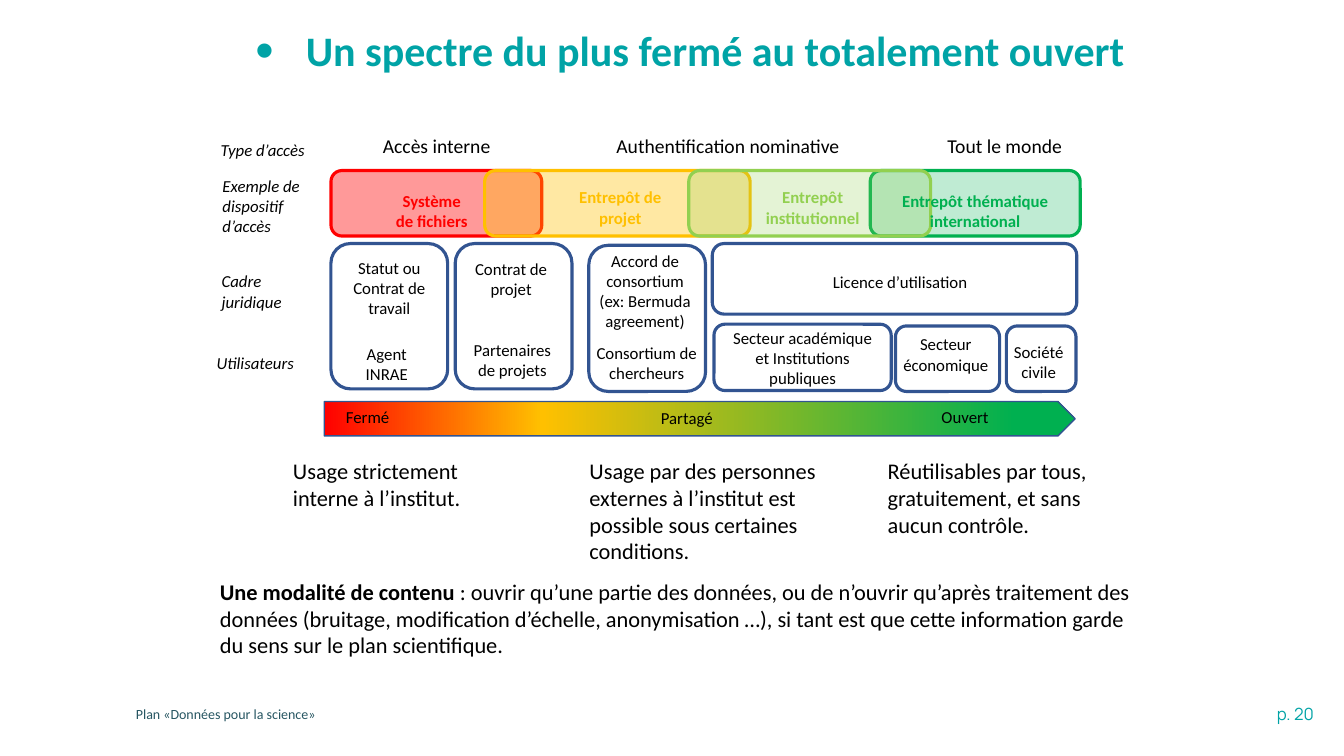
from copy import deepcopy

from lxml.etree import SubElement
from pptx import Presentation
from pptx.dml.color import RGBColor
from pptx.enum.shapes import MSO_SHAPE
from pptx.enum.text import MSO_ANCHOR, MSO_AUTO_SIZE, PP_ALIGN
from pptx.oxml.ns import qn
from pptx.util import Inches, Pt

COLOURS = {
    "teal": "00A3A6", "slate": "275662", "black": "000000", "navy": "325491",
    "red": "FF0000", "amber": "FFC000", "lime": "92D050", "green": "00B050",
}

deck = Presentation()
deck.slide_width, deck.slide_height = Inches(40 / 3), Inches(7.5)
CELL = deck.slide_width / 160  # grid of 160 columns by 90 rows
slide = deck.slides.add_slide(deck.slide_layouts[5])


def write(text, cells, holder=None, size=12, colour="black", font="Calibri", bold=False,
          italic=False, align=PP_ALIGN.LEFT, wrap=True, lead=""):
    """Write text at (column, row, width, height), after an optional bold lead."""
    left, top, width, height = [round(CELL * v) for v in cells]
    if holder is None:
        holder = slide.shapes.add_textbox(left, top, width, height)
    else:
        holder.left, holder.top, holder.width, holder.height = left, top, width, height
    frame = holder.text_frame
    frame.word_wrap = wrap
    frame.auto_size = MSO_AUTO_SIZE.NONE
    frame.vertical_anchor = MSO_ANCHOR.TOP
    frame.text = text
    for paragraph in frame.paragraphs:
        paragraph.alignment = align
        if lead:
            paragraph.text = lead
            paragraph.add_run().text = text
        for position, run in enumerate(paragraph.runs):
            run.font.size, run.font.name = Pt(size), font
            run.font.bold = bold or bool(lead and position == 0)
            run.font.italic = italic
            run.font.color.rgb = RGBColor.from_string(COLOURS[colour])
    return frame


def outline(kind, cells, colour="navy", width=2.25, opacity=0):
    """Draw an outlined shape, filled in its line colour if opacity (%) is given."""
    shape = slide.shapes.add_shape(kind, *[round(CELL * v) for v in cells])
    shape.shadow.inherit = False
    shape.line.color.rgb = RGBColor.from_string(COLOURS[colour])
    shape.line.width = Pt(width)
    shape.fill.background()
    if opacity:
        shape.fill.solid()
        shape.fill.fore_color.rgb = RGBColor.from_string(COLOURS[colour])
        tint = shape._element.spPr.find(qn("a:solidFill"))[0]
        SubElement(tint, qn("a:alpha"), val=str(opacity * 1000))
    return shape


# Title with its bullet
title = write("Un spectre du plus fermé au totalement ouvert", (29.2, 3, 106.9, 6.7),
              holder=slide.shapes.title, size=30, colour="teal", bold=True)
heading = title.paragraphs[0]
heading.line_spacing = 0.9
heading_format = heading._p.get_or_add_pPr()
heading_format.set("marL", str(Inches(0.5)))
heading_format.set("indent", str(Inches(-0.5)))
SubElement(heading_format, qn("a:buSzPct"), val="125000")
SubElement(heading_format, qn("a:buFont"), typeface="Arial")
SubElement(heading_format, qn("a:buChar"), char="•")

# Access types above the spectrum
for access, column, width in [("Accès interne", 44.4, 15.4),
                              ("Authentification nominative", 72.2, 29.4),
                              ("Tout le monde", 111.6, 16.4)]:
    write(access, (column, 15.4, width, 4.1), size=14, wrap=False)

# Row labels
for label, cells in [("Type d’accès", (25.1, 16.1, 13, 3.6)),
                     ("Exemple de dispositif d’accès", (25.3, 20.3, 13, 8.5)),
                     ("Cadre juridique", (25.2, 31.7, 12.5, 6)),
                     ("Utilisateurs", (24.6, 41.4, 11.8, 3.6))]:
    write(label, cells, italic=True)

# Overlapping spectrum of devices: colour, opacity, band, label
devices = [
    ("Entrepôt thématique international", "green", 25, (103.6, 25), (105.4, 22.1, 21.4, 6)),
    ("Système de fichiers", "red", 40, (39.4, 25.1), (45.7, 22.1, 11.4, 6)),
    ("Entrepôt de projet", "amber", 36, (57.7, 31.6), (67, 21.7, 13.7, 6)),
    ("Entrepôt institutionnel", "lime", 24, (82, 28.8), (89.9, 21.7, 13.7, 6)),
]
for _, colour, opacity, (column, width), _ in devices:
    outline(MSO_SHAPE.ROUNDED_RECTANGLE, (column, 20.3, width, 7.8), colour, opacity=opacity)
for device, colour, _, _, cells in devices:
    write(device, cells, colour=colour, bold=True, align=PP_ALIGN.CENTER)

# Frames around legal settings and users
for frame_cells in [(39.4, 29, 13.9, 17.3), (54.2, 29, 13.9, 17.3), (70.1, 29.2, 13.9, 17.4),
                    (84.8, 29, 43.4, 8.4), (85, 38.6, 21.1, 7.9),
                    (106.6, 38.8, 12.4, 7.8), (119.8, 38.8, 8.3, 7.8)]:
    outline(MSO_SHAPE.ROUNDED_RECTANGLE, frame_cells)

# Legal settings, then users
for entry, cells in [
    ("Statut ou Contrat de travail", (39.5, 30.1, 13.7, 8.5)),
    ("Contrat de projet", (54, 30.2, 13.7, 6)),
    ("Accord de consortium\n(ex: Bermuda agreement)", (70.1, 29.2, 13.4, 10.9)),
    ("Licence d’utilisation", (96.4, 31.8, 21.5, 3.6)),
    ("Agent INRAE", (39.8, 40.3, 12.5, 6)),
    ("Partenaires\nde projets", (55.1, 39.8, 11.8, 6)),
    ("Consortium de chercheurs", (69.7, 40.2, 14.6, 6)),
    ("Secteur académique et Institutions publiques", (85.4, 38.4, 20.3, 8.5)),
    ("Secteur économique", (106.3, 39.2, 12.6, 6)),
    ("Société civile", (119.4, 40.1, 8.5, 6)),
]:
    write(entry, cells, align=PP_ALIGN.CENTER)

# Gradient arrow from closed to open
openness = outline(MSO_SHAPE.PENTAGON, (38.6, 47.8, 89.4, 4.1), width=1)
openness.fill.gradient()
openness.fill.gradient_angle = 0
stops = openness._element.spPr.find(qn("a:gradFill")).find(qn("a:gsLst"))
stops.append(deepcopy(stops[0]))
for stop, (position, colour) in zip(openness.fill.gradient_stops,
                                    [(0, "red"), (0.29, "amber"), (0.92, "green")]):
    stop.position = position
    stop.color.rgb = RGBColor.from_string(COLOURS[colour])
for degree, column, row, width in [("Fermé", 40, 47.8, 7.7), ("Partagé", 77.5, 48, 8.8),
                                   ("Ouvert", 110.9, 47.8, 8)]:
    write(degree, (column, row, width, 3.6), wrap=False)

# Uses under the arrow
for use, column, width, height in [
    ("Usage strictement interne à l’institut.", 33.7, 28, 7.7),
    ("Usage par des personnes externes à l’institut est possible sous certaines conditions.",
     69, 35.5, 17.4),
    ("Réutilisables par tous, gratuitement, et sans aucun contrôle.", 104.5, 32.5, 10.9),
]:
    write(use, (column, 53.8, width, height), size=16)

# Closing remark
write(" : ouvrir qu’une partie des données, ou de n’ouvrir qu’après traitement des données "
      "(bruitage, modification d’échelle, anonymisation …), si tant est que cette information "
      "garde du sens sur le plan scientifique.",
      (25, 68.2, 111.5, 10.9), size=16, lead="Une modalité de contenu")

# Footer
write("Plan «Données pour la science»", (15, 83.4, 88.1, 3.4), size=10, colour="slate")
write("p. 20", (130.2, 83.2, 27.4, 3.6), colour="teal", font="Manrope", align=PP_ALIGN.RIGHT)

deck.save("out.pptx")
